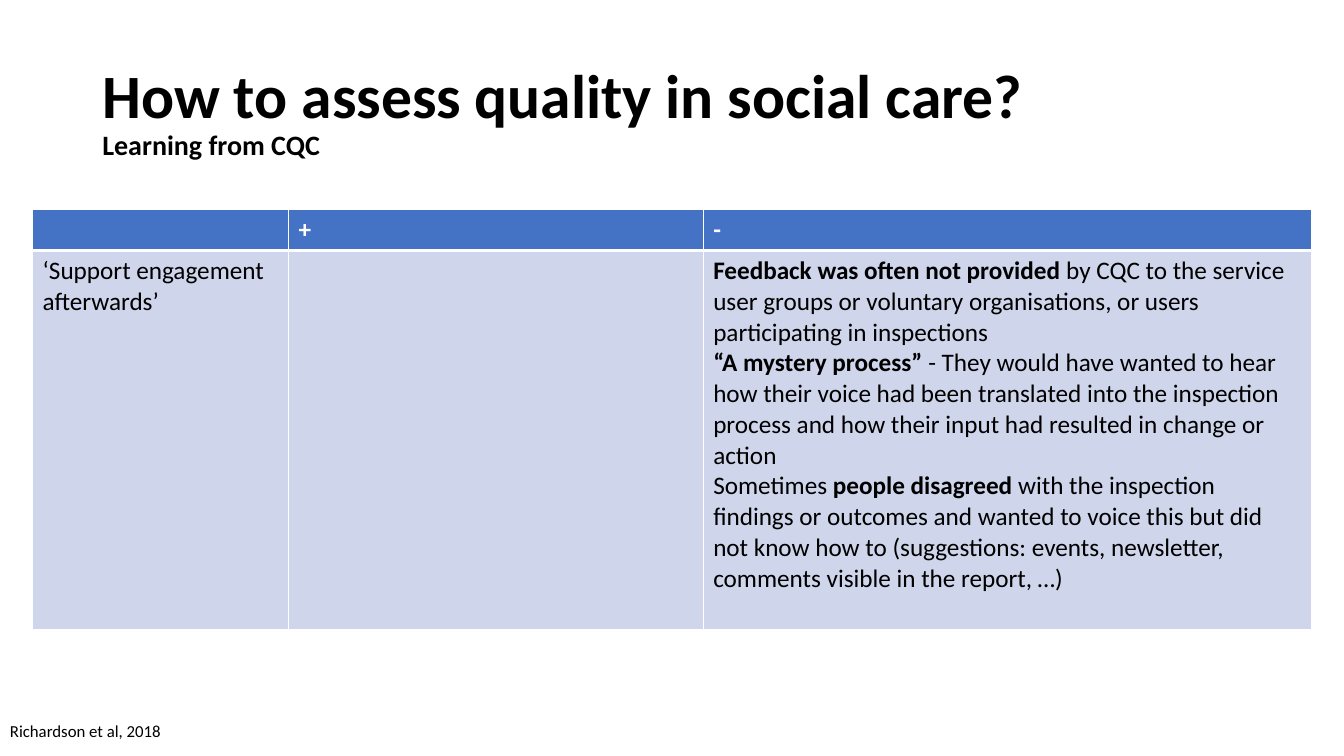
import pptx
import pptx.dml.color
import pptx.enum.text
import pptx.oxml
import pptx.oxml.ns
import pptx.util

Pt = pptx.util.Pt
Anchor = pptx.enum.text.MSO_ANCHOR
BLACK, WHITE, BLUE, PALE = "000000", "FFFFFF", "4472C4", "CFD5EA"

HEADS = ["", "+", "-"]
TOPIC = "‘Support engagement afterwards’"
# Each paragraph is a list of (text, bold) runs.
MINUS = [
    [("Feedback was often not provided ", True),
     ("by CQC to the service user groups or voluntary organisations, "
      "or users participating in inspections", False)],
    [("“A mystery process” ", True),
     ("- They would have wanted to hear how their voice had been translated "
      "into the inspection process and how their input had resulted in "
      "change or action", False)],
    [("Sometimes ", False), ("people disagreed ", True),
     ("with the inspection findings or outcomes and wanted to voice this but "
      "did not know how to (suggestions: events, newsletter, comments "
      "visible in the report, …)", False)],
]


def color(code):
    return pptx.dml.color.RGBColor.from_string(code)


def write(para, text, size=18, bold=False, ink=BLACK):
    run = para.add_run()
    run.text = text
    font = run.font
    font.name, font.size, font.bold = "Calibri", Pt(size), bold
    font.color.rgb = color(ink)


def edge(cell, **widths):
    """Draw white cell borders; keys are sides L, R, T, B and values points."""
    props = cell._tc.get_or_add_tcPr()
    for spot, side in enumerate("LRTB"):
        line = pptx.oxml.parse_xml(
            f'<a:ln{side} {pptx.oxml.ns.nsdecls("a")} w="{Pt(widths[side])}">'
            f'<a:solidFill><a:srgbClr val="{WHITE}"/></a:solidFill></a:ln{side}>')
        props.insert(spot, line)


def paint(cell, fill, top, base):
    cell.fill.solid()
    cell.fill.fore_color.rgb = color(fill)
    edge(cell, L=1, R=1, T=top, B=base)


def title(slide, left, top, width, height):
    frame = slide.shapes.add_textbox(Pt(left), Pt(top), Pt(width), Pt(height)).text_frame
    frame.word_wrap = True
    frame.vertical_anchor = Anchor.MIDDLE
    para = frame.paragraphs[0]
    para.line_spacing = 0.9
    write(para, "How to assess quality in social care?", size=44, bold=True)
    para.add_line_break()
    write(para, "Learning from CQC", size=20, bold=True)


def grid(slide, left, top, widths, heights):
    table = slide.shapes.add_table(
        len(heights), len(widths), Pt(left), Pt(top),
        Pt(sum(widths)), Pt(sum(heights))).table
    table.horz_banding = False
    for col, width in zip(table.columns, widths):
        col.width = Pt(width)
    for row, height in zip(table.rows, heights):
        row.height = Pt(height)
    for col, head in enumerate(HEADS):
        cell = table.cell(0, col)
        paint(cell, BLUE, 1, 3)
        if head:
            write(cell.text_frame.paragraphs[0], head, bold=True, ink=WHITE)
        paint(table.cell(1, col), PALE, 3, 1)
    write(table.cell(1, 0).text_frame.paragraphs[0], TOPIC)
    frame = table.cell(1, 2).text_frame
    for spot, runs in enumerate(MINUS):
        para = frame.add_paragraph() if spot else frame.paragraphs[0]
        for text, bold in runs:
            write(para, text, bold=bold)


def credit(slide, left, top, width, height):
    frame = slide.shapes.add_textbox(Pt(left), Pt(top), Pt(width), Pt(height)).text_frame
    frame.word_wrap = False
    frame.auto_size = pptx.enum.text.MSO_AUTO_SIZE.SHAPE_TO_FIT_TEXT
    write(frame.paragraphs[0], "Richardson et al, 2018", size=12)


def main():
    deck = pptx.Presentation()
    deck.slide_width, deck.slide_height = Pt(960), Pt(540)
    slide = deck.slides.add_slide(deck.slide_layouts[6])
    title(slide, 66, 28.75, 828, 104.4)
    grid(slide, 23.3, 149.8, [182.9, 296.1, 434.4], [29.2, 270.4])
    credit(slide, 0, 511.2, 123.8, 21.8)
    deck.save("out.pptx")


if __name__ == "__main__":
    main()
